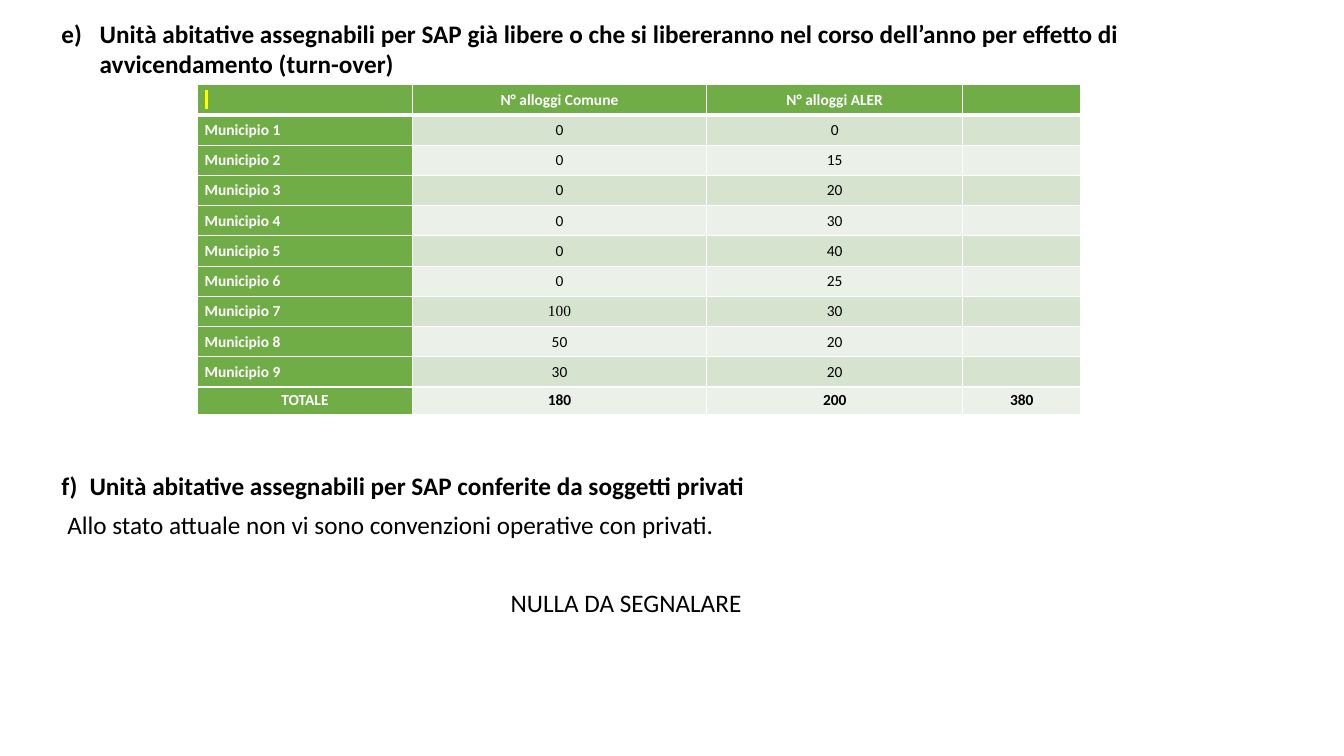
from lxml.etree import SubElement
from pptx import Presentation
from pptx.dml.color import RGBColor
from pptx.enum.text import MSO_ANCHOR as Anchor, MSO_AUTO_SIZE as AutoSize, PP_ALIGN as Align
from pptx.oxml.ns import qn
from pptx.util import Pt

PX = 9144  # EMU per px, 100 px to the inch
COLOURS = {
    "black": "000000", "white": "FFFFFF", "green": "70AD47",
    "band_dark": "D5E3CF", "band_light": "EBF1E9", "highlight": "FFFF00",
}


class SlideBuilder:
    font = "Calibri"
    text_size = 18
    cell_size = 11

    def __init__(self, presentation):
        self.slide = presentation.slides.add_slide(presentation.slide_layouts[6])

    def style(self, paragraph, size, colour="black", bold=False, font=None, after=6):
        paragraph.space_after = Pt(after)
        paragraph.font.name = font or self.font
        paragraph.font.size = Pt(size)
        paragraph.font.bold = bold
        paragraph.font.color.rgb = RGBColor.from_string(COLOURS[colour])

    def text_box(self, left, top, width, height):
        shape = self.slide.shapes.add_textbox(left * PX, top * PX, width * PX, height * PX)
        shape.text_frame.word_wrap = True
        shape.text_frame.auto_size = AutoSize.SHAPE_TO_FIT_TEXT
        return shape.text_frame

    def heading(self, paragraph, text, number, indent, after):
        paragraph.text = text
        properties = paragraph._p.get_or_add_pPr()
        properties.set("marL", str(indent * PX))
        properties.set("indent", str(-indent * PX))
        SubElement(properties, qn("a:buFont"), typeface="+mj-lt")
        SubElement(properties, qn("a:buAutoNum"), type="alphaLcParenR", startAt=str(number))
        self.style(paragraph, self.text_size, bold=True, after=after)

    def body(self, frame, text, indent=0, align=Align.LEFT, after=0):
        paragraph = frame.add_paragraph()
        paragraph.text = text
        paragraph.alignment = align
        paragraph._p.get_or_add_pPr().set("marL", str(indent * PX))
        self.style(paragraph, self.text_size, after=after)

    def table(self, left, top, columns, rows):
        frame = self.slide.shapes.add_table(len(rows), len(columns), left * PX, top * PX,
                                            sum(columns) * PX, sum(rows) * PX)
        for column, width in zip(frame.table.columns, columns):
            column.width = width * PX
        for row, height in zip(frame.table.rows, rows):
            row.height = height * PX
        frame.table.first_col = True
        return frame.table

    def borders(self, cell, top=1, bottom=1):
        for side, width in (("L", 1), ("R", 1), ("T", top), ("B", bottom)):
            line = SubElement(cell._tc.get_or_add_tcPr(), qn(f"a:ln{side}"), w=str(Pt(width)))
            fill = SubElement(line, qn("a:solidFill"))
            SubElement(fill, qn("a:srgbClr"), val=COLOURS["white"])

    def cell(self, cell, text, fill, colour, bold, align, font=None):
        cell.fill.solid()
        cell.fill.fore_color.rgb = RGBColor.from_string(COLOURS[fill])
        cell.vertical_anchor = Anchor.MIDDLE
        cell.margin_left = cell.margin_right = 7 * PX
        cell.margin_top = cell.margin_bottom = 0
        paragraph = cell.text_frame.paragraphs[0]
        paragraph.alignment = align
        self.style(paragraph, self.cell_size, colour, bold, font)
        if text:
            paragraph.add_run().text = text
        else:
            SubElement(paragraph._p, qn("a:endParaRPr"), sz=str(self.cell_size * 100))

    def highlight(self, cell):
        run = cell.text_frame.paragraphs[0].runs[0]
        mark = SubElement(run._r.get_or_add_rPr(), qn("a:highlight"))
        SubElement(mark, qn("a:srgbClr"), val=COLOURS["highlight"])


def main():
    presentation = Presentation()
    presentation.slide_width, presentation.slide_height = 1333 * PX, 750 * PX
    builder = SlideBuilder(presentation)

    # Section e: heading
    frame = builder.text_box(51, 13, 1181, 71)
    builder.heading(frame.paragraphs[0],
                    "Unità abitative assegnabili per SAP già libere o che si libereranno "
                    "nel corso dell’anno per effetto di avvicendamento (turn-over)",
                    number=5, indent=38, after=0)

    # Section f: heading and statement
    frame = builder.text_box(51, 462, 1140, 157)
    builder.heading(frame.paragraphs[0],
                    "Unità abitative assegnabili per SAP conferite da soggetti privati",
                    number=6, indent=28, after=6)
    builder.body(frame, "Allo stato attuale non vi sono convenzioni operative con privati.",
                 indent=6, after=34)
    builder.body(frame, "NULLA DA SEGNALARE", align=Align.CENTER)

    # Section e: dwellings by district
    municipal = [0, 0, 0, 0, 0, 0, 100, 50, 30]
    aler = [0, 15, 20, 30, 40, 25, 30, 20, 20]
    totals = [sum(municipal), sum(aler)]
    records = [["\u00a0".replace("\u00a0", " "), "N° alloggi Comune", "N° alloggi ALER", ""]]
    records += [[f"Municipio {number}", str(own), str(other), ""]
                for number, (own, other) in enumerate(zip(municipal, aler), 1)]
    records.append(["TOTALE", *map(str, totals), str(sum(totals))])

    last = len(records) - 1
    table = builder.table(196, 84, [213, 292, 254, 117], [30] * last + [27])
    for row, record in enumerate(records):
        for column, text in enumerate(record):
            cell = table.cell(row, column)
            header = row == 0 or column == 0
            band = "band_dark" if row % 2 else "band_light"
            builder.borders(cell, top=3 if row == 1 else 1, bottom=3 if row == 0 else 1)
            builder.cell(cell, text,
                         fill="green" if header else band,
                         colour="white" if header else "black",
                         bold=header or row == last,
                         align=Align.LEFT if column == 0 and row < last else Align.CENTER,
                         font="Times New Roman" if text == "100" else None)
    builder.highlight(table.cell(0, 0))

    presentation.save("out.pptx")


if __name__ == "__main__":
    main()
